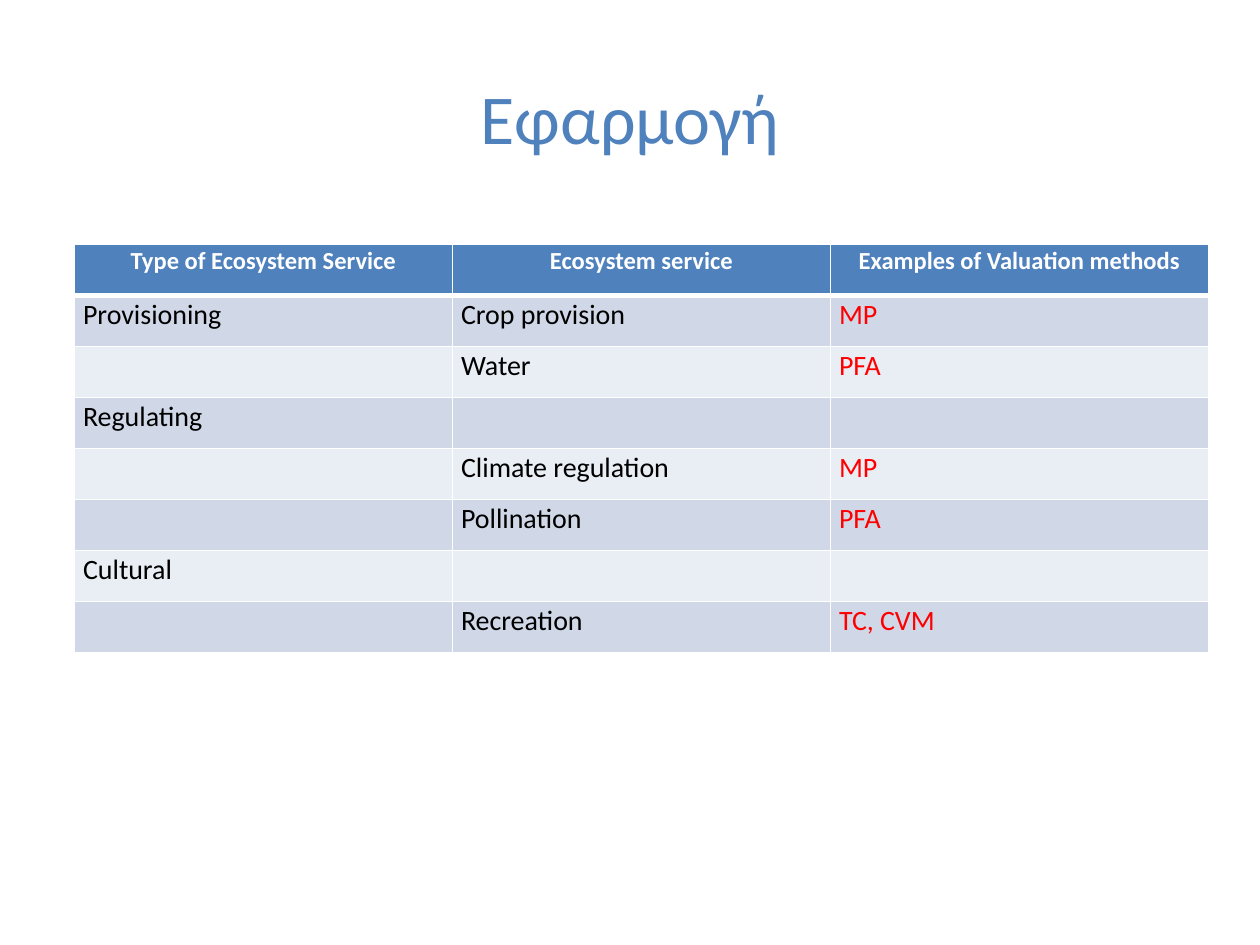
import dataclasses

import lxml.etree
import pptx
import pptx.dml.color
import pptx.enum.text
import pptx.oxml.ns
import pptx.util

Pt = pptx.util.Pt
RGB = pptx.dml.color.RGBColor.from_string
ALIGN = pptx.enum.text.PP_ALIGN
ANCHOR = pptx.enum.text.MSO_ANCHOR


@dataclasses.dataclass(frozen=True)
class Theme:
    font: str = "Calibri"
    blue: str = "4F81BD"
    white: str = "FFFFFF"
    black: str = "000000"
    red: str = "FF0000"
    bands: tuple = ("D0D8E8", "E9EDF4")
    title: int = 40
    head: int = 14
    body: int = 16


THEME = Theme()

ROWS = [
    ("Type of Ecosystem Service", "Ecosystem service", "Examples of Valuation methods"),
    ("Provisioning", "Crop provision", "MP"),
    ("", "Water", "PFA"),
    ("Regulating", "", ""),
    ("", "Climate regulation", "MP"),
    ("", "Pollination", "PFA"),
    ("Cultural", "", ""),
    ("", "Recreation", "TC, CVM"),
]


def style(para, size, color, bold=False, align=ALIGN.LEFT):
    para.alignment = align
    for font in [para.font] + [run.font for run in para.runs]:
        font.name = THEME.font
        font.size = Pt(size)
        font.bold = bold
        font.color.rgb = RGB(color)


def add_title(slide, text):
    box = slide.shapes.add_textbox(Pt(36), Pt(21.6), Pt(648), Pt(90))
    frame = box.text_frame
    frame.word_wrap = True
    frame.vertical_anchor = ANCHOR.MIDDLE
    frame.text = text
    style(frame.paragraphs[0], THEME.title, THEME.blue, align=ALIGN.CENTER)


def add_edge(cell, side, width):
    tag = pptx.oxml.ns.qn
    props = cell._tc.get_or_add_tcPr()
    line = lxml.etree.SubElement(props, tag("a:ln" + side), w=str(Pt(width)))
    fill = lxml.etree.SubElement(line, tag("a:solidFill"))
    lxml.etree.SubElement(fill, tag("a:srgbClr"), val=THEME.white)


def fill_cell(cell, text, row, col):
    head = row == 0
    cell.margin_left = cell.margin_right = Pt(5)
    cell.margin_top = cell.margin_bottom = 0
    # Edges must come before the fill in the cell's XML.
    thick = {"T": row == 1, "B": head}
    for side in "LRTB":
        add_edge(cell, side, 3 if thick.get(side) else 1)
    cell.fill.solid()
    cell.fill.fore_color.rgb = RGB(THEME.blue if head else THEME.bands[(row - 1) % 2])
    cell.text_frame.text = text
    para = cell.text_frame.paragraphs[0]
    para.line_spacing = 1.07
    if head:
        style(para, THEME.head, THEME.white, True, ALIGN.CENTER)
    else:
        style(para, THEME.body, THEME.red if col == 2 else THEME.black)


def add_grid(slide, rows):
    width, height = 216, 29.16
    count = len(rows[0])
    table = slide.shapes.add_table(
        len(rows), count, Pt(42.5), Pt(139.7), Pt(width * count), Pt(height * len(rows))
    ).table
    for col in table.columns:
        col.width = Pt(width)
    for r, texts in enumerate(rows):
        table.rows[r].height = Pt(height)
        for c, text in enumerate(texts):
            fill_cell(table.cell(r, c), text, r, c)


def main():
    deck = pptx.Presentation()
    deck.slide_width, deck.slide_height = Pt(720), Pt(540)
    slide = deck.slides.add_slide(deck.slide_layouts[6])
    add_title(slide, "Εφαρμογή")
    add_grid(slide, ROWS)
    deck.save("out.pptx")


if __name__ == "__main__":
    main()
